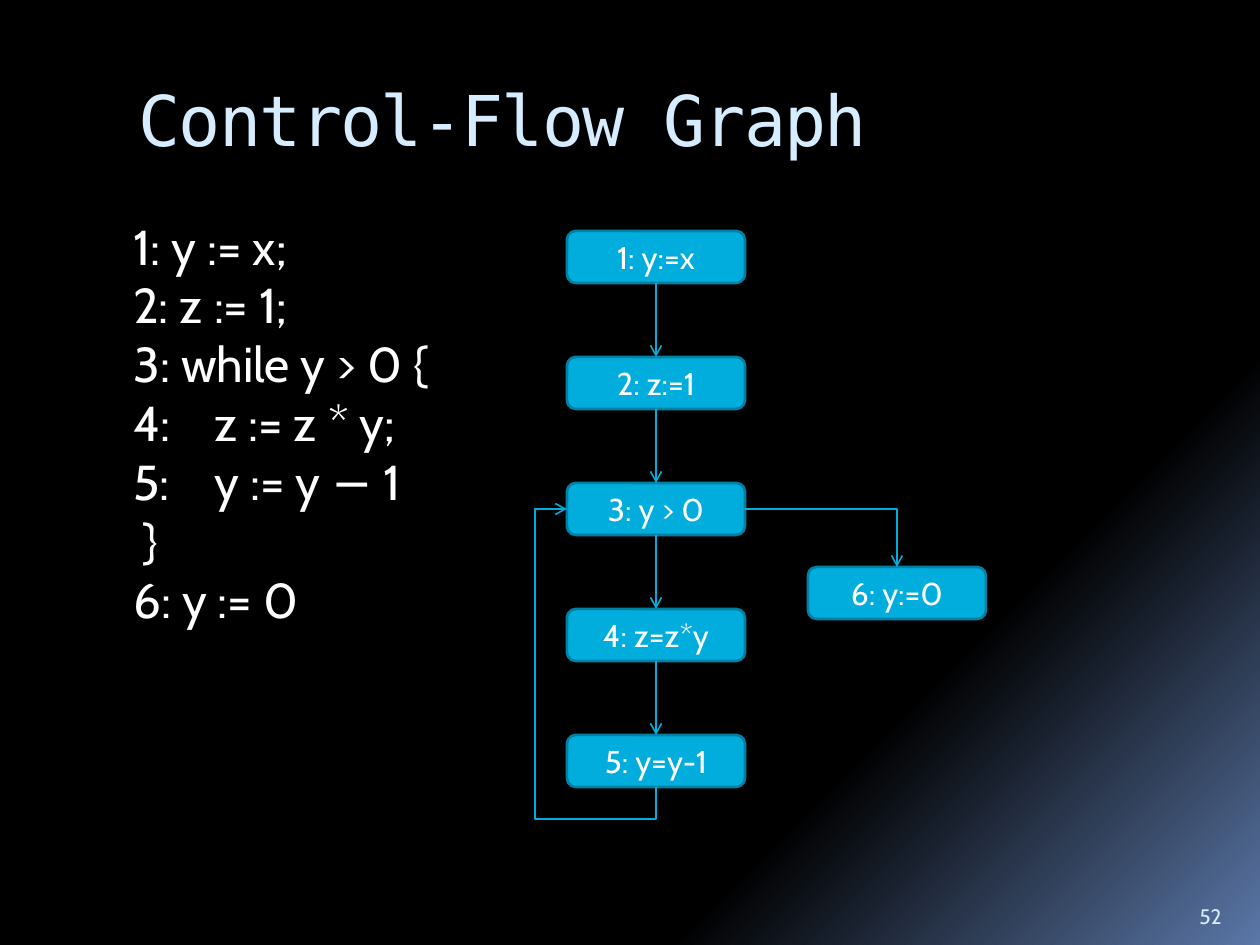
from lxml import etree
from pptx import Presentation
from pptx import util as u
from pptx.dml.color import RGBColor
from pptx.enum import shapes, text
from pptx.oxml.ns import qn

PX = 914400 / 126
FONT, MONO = "Cabin", "DejaVu Sans Mono"
WHITE, PALE, CYAN, EDGE = "FFFFFF", "D6ECFF", "00ADDC", "0080A3"
BACKGROUND = [(65, "000000"), (73, "000000"), (100, "5B77A8")]

TITLE = "Control-Flow Graph"
# text and left indent in px
CODE = [
    ("1: y := x;", 0),
    ("2: z := 1;", 0),
    ("3: while y > 0 {", 0),
    ("4:\tz := z * y;", 0),
    ("5:\ty := y − 1", 0),
    ("}", 10),
    ("6: y := 0", 0),
]
CODE_TAB = 81
LOOP_NODES = ["1: y:=x", "2: z:=1", "3: y > 0", "4: z=z*y", "5: y=y-1"]
EXIT_NODE = "6: y:=0"
PAGE_NUMBER = "52"

NODE_W, NODE_H = 178, 52
COLUMN_X, COLUMN_Y, STEP = 567, 231, 126
EXIT_X, EXIT_Y = 808, 567
LOOP_OUT = 32  # distance of the loop line from the nodes
TOP, LEFT, BOTTOM, RIGHT = range(4)  # connection sites


def px(length):
    return u.Emu(round(length * PX))


def color(hex_string):
    return RGBColor.from_string(hex_string)


def add_span(para, words, size, hex_string, font=FONT):
    span = para.add_run()
    span.text = words
    span.font.size = u.Pt(size)
    span.font.name = font
    span.font.color.rgb = color(hex_string)
    return span


def paint_background(page):
    fill = page.background.fill
    fill.gradient()
    fill.gradient_angle = 315
    stops = page.element.find(".//" + qn("a:gsLst"))
    for stop in list(stops):
        stops.remove(stop)
    for percent, hex_string in BACKGROUND:
        stop = etree.SubElement(stops, qn("a:gs"), pos=str(percent * 1000))
        etree.SubElement(stop, qn("a:srgbClr"), val=hex_string)


def add_title(page):
    title = page.shapes.title
    title.left, title.top, title.width, title.height = map(px, (126, 70, 1071, 126))
    frame = title.text_frame
    frame.auto_size = text.MSO_AUTO_SIZE.NONE
    frame.vertical_anchor = text.MSO_ANCHOR.TOP
    para = frame.paragraphs[0]
    para.alignment = text.PP_ALIGN.LEFT
    span = add_span(para, TITLE, 40, PALE, MONO)
    span.font._element.set("spc", "-100")


def add_text_box(page, left, top, width, height):
    box = page.shapes.add_textbox(*map(px, (left, top, width, height)))
    box.text_frame.word_wrap = True
    return box.text_frame


def add_code(page):
    frame = add_text_box(page, 121, 210, 340, 428)
    for number, (words, indent) in enumerate(CODE):
        para = frame.add_paragraph() if number else frame.paragraphs[0]
        props = para._p.get_or_add_pPr()
        props.set("marL", str(px(indent)))
        if "\t" in words:
            tabs = etree.SubElement(props, qn("a:tabLst"))
            etree.SubElement(tabs, qn("a:tab"), pos=str(px(CODE_TAB)), algn="l")
        add_span(para, words, 28, WHITE)


def add_node(page, words, left, top):
    node = page.shapes.add_shape(
        shapes.MSO_SHAPE.ROUNDED_RECTANGLE, *map(px, (left, top, NODE_W, NODE_H)))
    node.shadow.inherit = False
    node.fill.solid()
    node.fill.fore_color.rgb = color(CYAN)
    node.line.color.rgb = color(EDGE)
    node.line.width = u.Pt(1.5)
    frame = node.text_frame
    frame.vertical_anchor = text.MSO_ANCHOR.MIDDLE
    para = frame.paragraphs[0]
    para.alignment = text.PP_ALIGN.CENTER
    add_span(para, words, 18, WHITE)
    return node


def add_arrow(page, start, start_site, end, end_site, preset="line"):
    arrow = page.shapes.add_connector(shapes.MSO_CONNECTOR.STRAIGHT, 0, 0, 0, 0)
    arrow.begin_connect(start, start_site)
    arrow.end_connect(end, end_site)
    arrow.line.color.rgb = color(CYAN)
    arrow.line.width = u.Pt(0.94)
    props = arrow.element.spPr
    props.find(qn("a:prstGeom")).set("prst", preset)
    etree.SubElement(props.find(qn("a:ln")), qn("a:tailEnd"), type="arrow")
    etree.SubElement(props, qn("a:effectLst"))
    return arrow


def add_loop_arrow(page, last, test):
    """Runs from under the last node, round the left side, to the test node."""
    arrow = add_arrow(page, last, BOTTOM, test, LEFT, "bentConnector4")
    across = last.width // 2
    rise = last.top + last.height - test.top - test.height // 2
    center_x = last.left + across // 2
    center_y = last.top + last.height - rise // 2
    # turned by a quarter, so width is the rise
    arrow.left, arrow.top = center_x - rise // 2, center_y - across // 2
    arrow.width, arrow.height = rise, across
    frame = arrow.element.spPr.find(qn("a:xfrm"))
    for flip in ("flipH", "flipV"):
        frame.attrib.pop(flip, None)
    frame.set("rot", "5400000")
    frame.set("flipH", "1")
    geometry = arrow.element.spPr.find(qn("a:prstGeom"))
    guides = geometry.find(qn("a:avLst"))
    if guides is None:
        guides = etree.SubElement(geometry, qn("a:avLst"))
    out = px(LOOP_OUT)
    for name, ratio in (("adj1", -out / rise), ("adj2", 1 + out / across)):
        etree.SubElement(guides, qn("a:gd"), name=name,
                         fmla=f"val {round(ratio * 100000)}")


def add_graph(page):
    nodes = [add_node(page, words, COLUMN_X, COLUMN_Y + STEP * row)
             for row, words in enumerate(LOOP_NODES)]
    exit_node = add_node(page, EXIT_NODE, EXIT_X, EXIT_Y)
    for upper, lower in zip(nodes, nodes[1:]):
        add_arrow(page, upper, BOTTOM, lower, TOP)
    test = nodes[2]
    add_arrow(page, test, RIGHT, exit_node, TOP, "bentConnector2")
    add_loop_arrow(page, nodes[-1], test)


def add_page_number(page):
    frame = add_text_box(page, 1187, 885, 63, 50)
    frame.vertical_anchor = text.MSO_ANCHOR.BOTTOM
    add_span(frame.paragraphs[0], PAGE_NUMBER, 12, PALE)


def main():
    deck = Presentation()
    deck.slide_width, deck.slide_height = px(1260), px(945)
    page = deck.slides.add_slide(deck.slide_layouts[5])
    paint_background(page)
    add_title(page)
    add_code(page)
    add_graph(page)
    add_page_number(page)
    deck.save("out.pptx")


if __name__ == "__main__":
    main()
